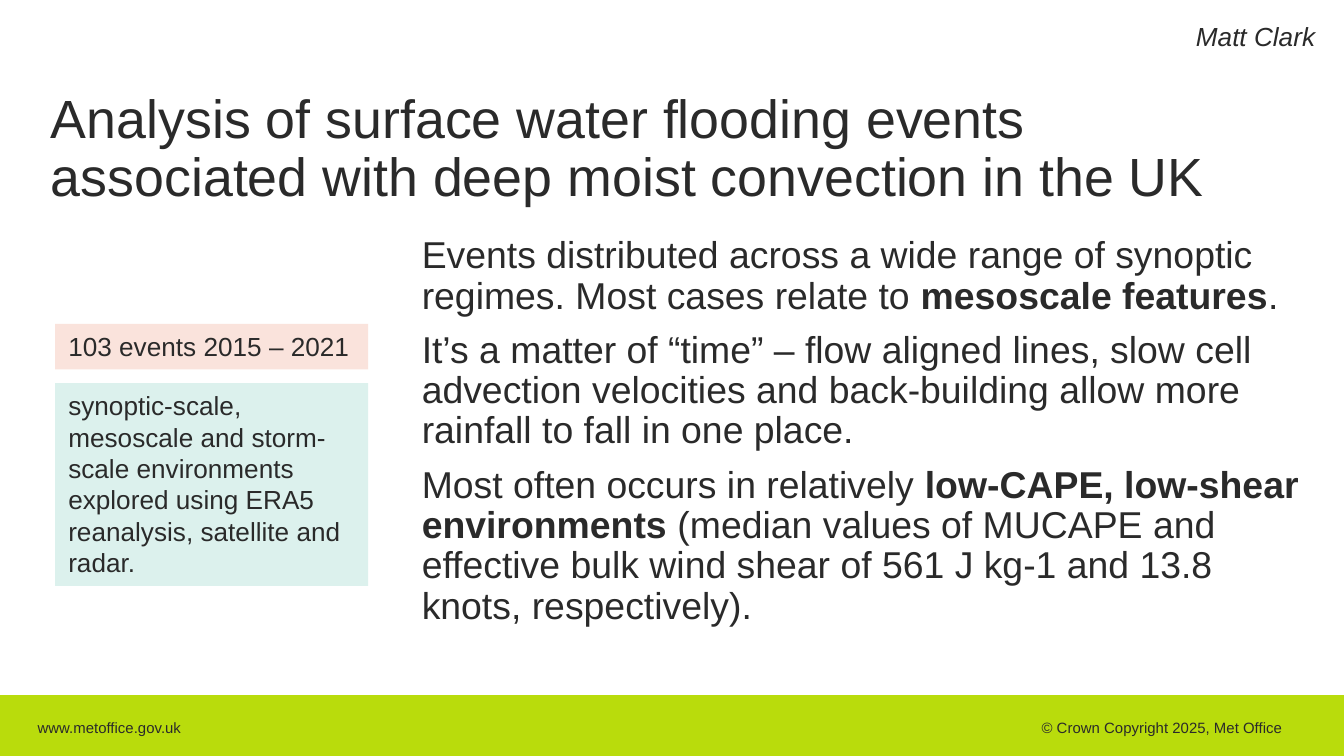
from pptx import Presentation
from pptx.dml.color import RGBColor
from pptx.enum.shapes import MSO_SHAPE as Preset
from pptx.enum.text import MSO_ANCHOR as Anchor, PP_ALIGN as Align
from pptx.oxml import parse_xml
from pptx.oxml.ns import nsdecls
from pptx.util import Inches, Pt

INK = RGBColor(0x2A, 0x2A, 0x2A)
LIME = RGBColor(0xB9, 0xDC, 0x0C)
PINK = RGBColor(0xFA, 0xE3, 0xDC)
MINT = RGBColor(0xDC, 0xF1, 0xED)

WIDTH = 10
HEIGHT = WIDTH * 9 / 16

TITLE = "Analysis of surface water flooding events associated with deep moist convection in the UK"
# Each finding is a list of spans; every second span is bold.
FINDINGS = [
    ["Events distributed across a wide range of synoptic regimes. Most cases relate to ",
     "mesoscale features", "."],
    ["It’s a matter of “time” – flow aligned lines, slow cell advection velocities "
     "and back-building allow more rainfall to fall in one place."],
    ["Most often occurs in relatively ", "low-CAPE, low-shear environments ",
     "(median values of MUCAPE and effective bulk wind shear of 561 J kg-1 "
     "and 13.8 knots, respectively)."],
]
NOTES = [
    ("103 events 2015 – 2021", 2.41, 0.34, PINK),
    ("synoptic-scale, mesoscale and storm-scale environments explored using "
     "ERA5 reanalysis, satellite and radar.", 2.85, 1.51, MINT),
]
FOOTER = "www.metoffice.gov.uk\t© Crown Copyright 2025, Met Office"


def set_format(target, values):
    for name, value in values.items():
        setattr(target, name, value)


def write(box, paragraphs, size, italic=False, anchor=Anchor.TOP, **spacing):
    """Fill a box with paragraphs, each a list of alternating plain and bold spans."""
    frame = box.text_frame
    set_format(frame, {"word_wrap": True, "vertical_anchor": anchor})
    for index, spans in enumerate(paragraphs):
        para = frame.add_paragraph() if index else frame.paragraphs[0]
        set_format(para, {"alignment": Align.LEFT, **spacing})
        if index == 0:
            para.space_before = Pt(0)
        for position, text in enumerate(spans):
            span = para.add_run()
            span.text = text
            set_format(span.font, {"name": "Arial", "size": Pt(size), "italic": italic,
                                   "bold": position % 2 == 1})
            span.font.color.rgb = INK


def add_text(page, place, paragraphs, size, **options):
    box = page.shapes.add_textbox(*map(Inches, place))
    write(box, paragraphs, size, **options)


def add_panel(page, place, fill):
    panel = page.shapes.add_shape(Preset.RECTANGLE, *map(Inches, place))
    panel.shadow.inherit = False
    panel.fill.solid()
    panel.fill.fore_color.rgb = fill
    panel.line.fill.background()
    return panel


def add_footer(page):
    bar = add_panel(page, (0, 5.18, WIDTH, 0.45), LIME)
    bar.line.color.rgb = LIME
    bar.line.width = Pt(1)
    set_format(bar.text_frame, {"margin_left": Inches(0.28), "margin_top": Inches(0.04),
                                "margin_right": Inches(0.07), "margin_bottom": Inches(0.03)})
    properties = bar.text_frame.paragraphs[0]._p.get_or_add_pPr()
    properties.append(parse_xml(
        f'<a:tabLst {nsdecls("a")}><a:tab pos="{Inches(7.47)}" algn="l"/></a:tabLst>'))
    write(bar, [[FOOTER]], 8, anchor=Anchor.MIDDLE)


def main():
    deck = Presentation()
    set_format(deck, {"slide_width": Inches(WIDTH), "slide_height": Inches(HEIGHT)})
    page = deck.slides.add_slide(deck.slide_layouts[6])

    add_text(page, (3.04, 1.71, 6.77, 3.35), FINDINGS, 20,
             line_spacing=0.9, space_before=Pt(7.5))
    add_text(page, (0.28, 0.97, 9.45, 0.63), [[TITLE]], 28.8,
             anchor=Anchor.BOTTOM, line_spacing=0.9)
    for text, top, height, fill in NOTES:
        write(add_panel(page, (0.41, top, 2.33, height), fill), [[text]], 14)
    add_footer(page)
    add_text(page, (8.8, 0.1, 1.2, 0.34), [["Matt Clark"]], 14, italic=True)

    deck.save("out.pptx")


if __name__ == "__main__":
    main()
